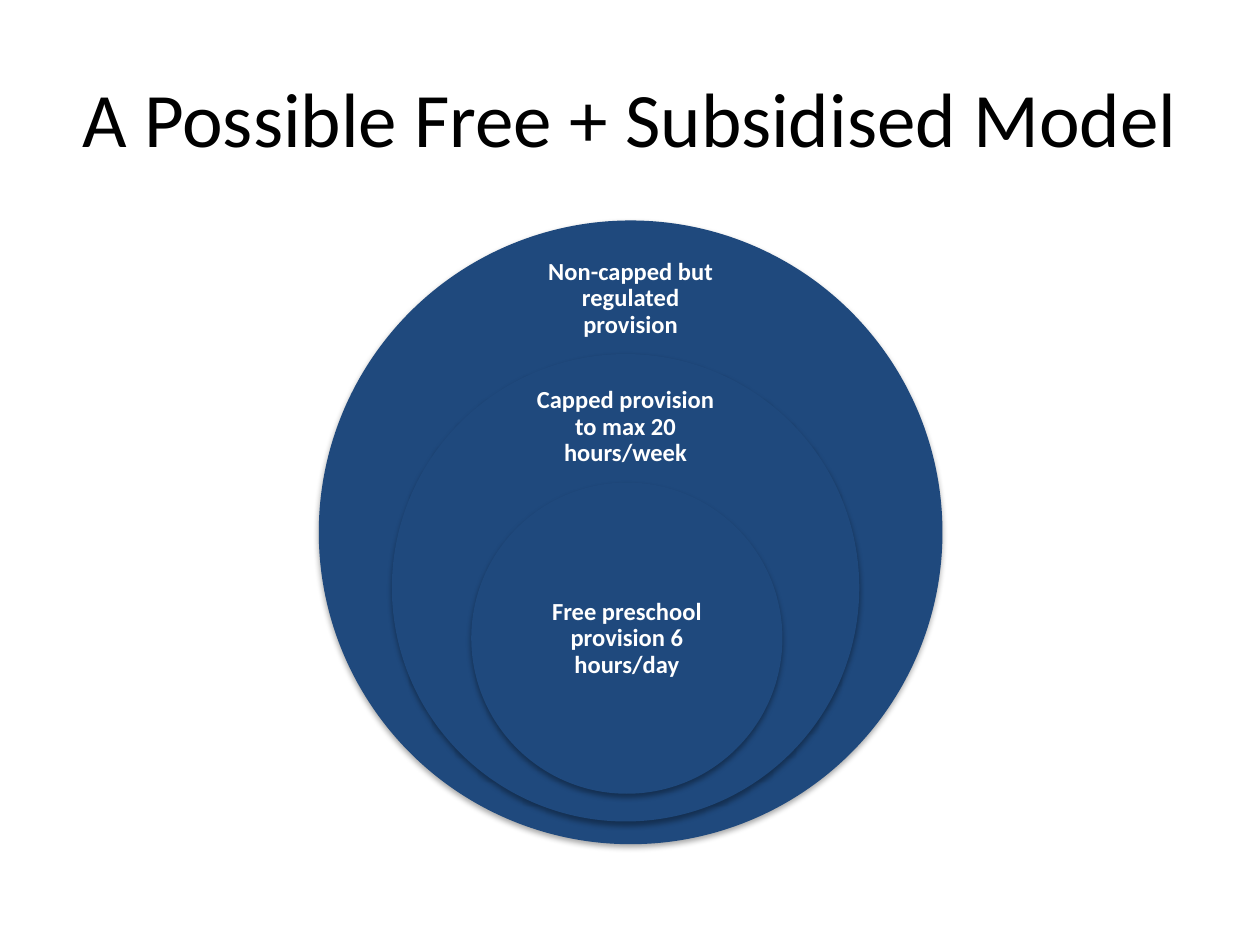
from lxml.etree import SubElement
from pptx import Presentation
from pptx.dml.color import RGBColor
from pptx.enum.shapes import MSO_SHAPE as SHAPE
from pptx.enum.text import MSO_ANCHOR as ANCHOR, PP_ALIGN as ALIGN
from pptx.oxml.ns import qn
from pptx.util import Inches, Pt

# Content
TITLE = "A Possible Free + Subsidised Model"
NAVY, WHITE, BLACK = "1F497D", "FFFFFF", "000000"
# Outermost first: circle (left, top, diameter), label (left, top, width, height), text
RINGS = [
    ((2.53, 1.75, 4.95), (4.14, 2, 1.73, 0.74), "Non-capped but regulated provision"),
    ((3.11, 2.81, 3.71), (4.1, 3.04, 1.73, 0.7), "Capped provision to max 20 hours/week"),
    ((3.74, 3.83, 2.47), (4.1, 4.45, 1.75, 1.24), "Free preschool provision 6 hours/day"),
]


def rgb(color):
    return RGBColor.from_string(color)


def write(tf, text, size, color, bold=False, spacing=None, inset=None):
    tf.word_wrap = True
    tf.vertical_anchor = ANCHOR.MIDDLE
    if inset is not None:
        tf.margin_left = tf.margin_right = Inches(inset)
        tf.margin_top = tf.margin_bottom = Inches(inset)
    p = tf.paragraphs[0]
    p.alignment = ALIGN.CENTER
    p.line_spacing = spacing
    r = p.add_run()
    r.text = text
    r.font.name, r.font.size, r.font.bold = "Calibri", Pt(size), bold
    r.font.color.rgb = rgb(color)


def add_shadow(sp, color=BLACK, opacity=35, blur=3.1, dist=1.8, angle=90):
    sp.shadow.inherit = False
    effects = sp._element.spPr.find(qn("a:effectLst"))
    shadow = SubElement(effects, qn("a:outerShdw"), blurRad=str(Pt(blur)),
                        dist=str(Pt(dist)), dir=str(angle * 60000), rotWithShape="0")
    clr = SubElement(shadow, qn("a:srgbClr"), val=color)
    SubElement(clr, qn("a:alpha"), val=str(opacity * 1000))


def add_circle(shapes, left, top, diameter):
    sp = shapes.add_shape(SHAPE.OVAL, *map(Inches, (left, top, diameter, diameter)))
    sp.fill.solid()
    sp.fill.fore_color.rgb = rgb(NAVY)
    sp.line.fill.background()
    add_shadow(sp)


prs = Presentation()
prs.slide_width, prs.slide_height = Inches(10), Inches(7.5)
s = prs.slides.add_slide(prs.slide_layouts[5])

# Title
title = s.shapes.title
title.left, title.top, title.width, title.height = map(Inches, (0.5, 0.3, 9, 1.25))
write(title.text_frame, TITLE, 44, BLACK)

# Nested circles with their labels
group = s.shapes.add_group_shape()
for circle, label, text in RINGS:
    add_circle(group.shapes, *circle)
    box = group.shapes.add_textbox(*map(Inches, label))
    write(box.text_frame, text, 14, WHITE, bold=True, spacing=0.9, inset=0.11)

prs.save("out.pptx")
